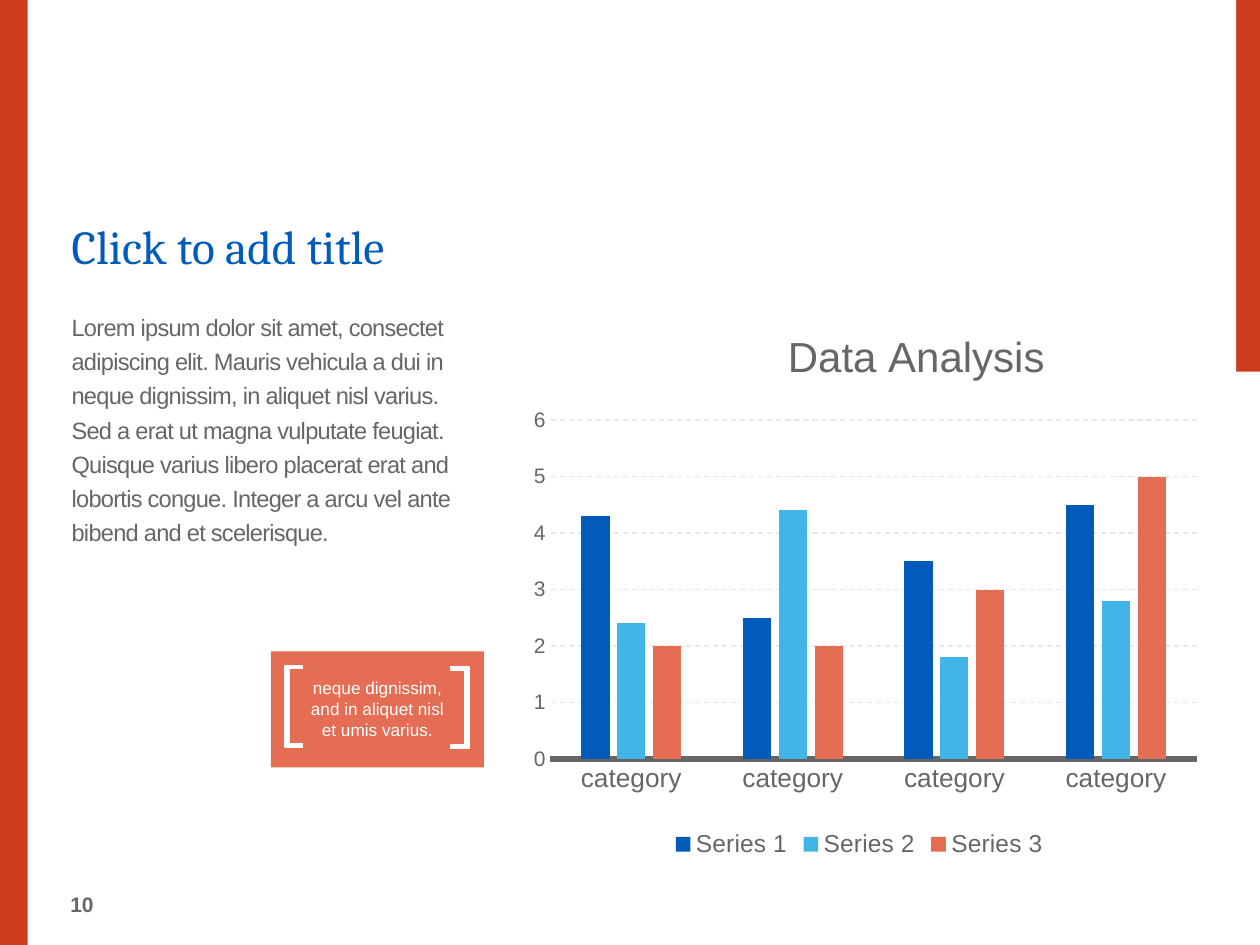
from lxml import etree
from pptx import Presentation
from pptx.chart.data import CategoryChartData
from pptx.dml.color import RGBColor
from pptx.enum.chart import XL_CHART_TYPE, XL_LEGEND_POSITION, XL_TICK_MARK
from pptx.enum.dml import MSO_LINE
from pptx.enum.shapes import MSO_SHAPE
from pptx.enum.text import MSO_ANCHOR, PP_ALIGN
from pptx.oxml import parse_xml
from pptx.oxml.ns import nsdecls, qn
from pptx.util import Pt

RED = RGBColor(0xCC, 0x3D, 0x1F)
WHITE = RGBColor(0xFF, 0xFF, 0xFF)
GREY = RGBColor(0x66, 0x66, 0x66)
GRID = RGBColor(0xE8, 0xE8, 0xE8)
BLUE = RGBColor(0x00, 0x5B, 0xBB)
SKY = RGBColor(0x41, 0xB6, 0xE6)
CORAL = RGBColor(0xE5, 0x6D, 0x54)

BODY = (
    "Lorem ipsum dolor sit amet, consectet adipiscing elit. Mauris vehicula a dui in "
    "neque dignissim, in aliquet nisl varius. Sed a erat ut magna vulputate feugiat. "
    "Quisque varius libero placerat erat and lobortis congue. Integer a arcu vel ante "
    "bibend and et scelerisque."
)
CATEGORIES = ["category"] * 4
SERIES = [
    ("Series 1", (4.3, 2.5, 3.5, 4.5), BLUE),
    ("Series 2", (2.4, 4.4, 1.8, 2.8), SKY),
    ("Series 3", (2, 2, 3, 5), CORAL),
]


def set_font(font, size, color, name="Arial", bold=False):
    for key, value in {"size": Pt(size), "name": name, "bold": bold}.items():
        setattr(font, key, value)
    font.color.rgb = color


def add_rectangle(page, box, color):
    shape = page.shapes.add_shape(MSO_SHAPE.RECTANGLE, *map(Pt, box))
    shape.shadow.inherit = False
    shape.fill.solid()
    shape.fill.fore_color.rgb = color
    shape.line.fill.background()


def add_text(page, box, text, size, color, name="Arial", bold=False,
             anchor=MSO_ANCHOR.TOP, spacing=None, tracking=None, align=PP_ALIGN.LEFT):
    frame = page.shapes.add_textbox(*map(Pt, box)).text_frame
    frame.word_wrap = True
    frame.vertical_anchor = anchor
    para = frame.paragraphs[0]
    para.text = text
    para.alignment = align
    para.line_spacing = spacing
    for span in para.runs:
        set_font(span.font, size, color, name, bold)
        if tracking:
            span.font._element.set("spc", str(tracking))


def add_bracket(page, box, opens_right):
    """Square bracket filling the box, its arms pointing right or left."""
    left, top, width, height = box
    stem, arm = 2.2, 1.8
    outline = [(width, 0), (0, 0), (0, height), (width, height),
               (width, height - arm), (stem, height - arm), (stem, arm), (width, arm)]
    points = [(Pt(left + (x if opens_right else width - x)), Pt(top + y))
              for x, y in outline]
    builder = page.shapes.build_freeform(*points[0])
    builder.add_line_segments(points[1:], close=True)
    shape = builder.convert_to_shape()
    shape.shadow.inherit = False
    shape.fill.solid()
    shape.fill.fore_color.rgb = WHITE
    shape.line.color.rgb = WHITE
    shape.line.width = Pt(1)


def add_frame(page, box):
    """White panels over the red ground, leaving a full left and a short right band."""
    left, top, width, height = box
    add_rectangle(page, (left + 15.84, top, 690.48, height), WHITE)
    add_rectangle(page, (left + 519.84, top + 212.4, width - 519.84, height - 212.4), WHITE)


def add_copy(page, box):
    """Title with the body text below it."""
    left, top, width, height = box
    add_text(page, (left, top, width, 56.16), "Click to add title", 27, BLUE,
             name="Cambria", anchor=MSO_ANCHOR.BOTTOM, spacing=0.8)
    add_text(page, (left, top + 68.4, 236.16, height - 68.4), BODY, 13.5, GREY,
             spacing=Pt(19.5), tracking=-40)


def add_callout(page, box):
    """Coral block with bracketed text."""
    left, top, width, height = box
    add_rectangle(page, box, CORAL)
    add_bracket(page, (left + 8, top + 8, 10, 46.5), True)
    add_bracket(page, (left + 103, top + 9, 10, 46.5), False)
    add_text(page, (left + 14.4, top + 11.5, 92.9, 42.5),
             "neque dignissim, and in aliquet nisl\vet umis varius.", 9.8, WHITE,
             align=PP_ALIGN.CENTER)


def manual_layout(x, y, w=None, h=None):
    layout = parse_xml(f"<c:layout {nsdecls('c')}><c:manualLayout/></c:layout>")
    parts = [("layoutTarget", "inner")] if w else []
    parts += [("xMode", "edge"), ("yMode", "edge"), ("x", x), ("y", y)]
    parts += [("w", w), ("h", h)] if w else []
    for tag, value in parts:
        etree.SubElement(layout[0], qn(f"c:{tag}")).set("val", str(value))
    return layout


def place(parent, layout, index):
    for old in parent.findall(qn("c:layout")):
        parent.remove(old)
    parent.insert(index, layout)


def add_column_chart(page, box):
    data = CategoryChartData()
    data.categories = CATEGORIES
    for name, values, _ in SERIES:
        data.add_series(name, values)
    chart = page.shapes.add_chart(
        XL_CHART_TYPE.COLUMN_CLUSTERED, *map(Pt, box), data).chart
    set_font(chart.font, 10, GREY)

    # Title and plot area
    title = chart.chart_title
    title.text_frame.text = "Data Analysis"
    set_font(title.text_frame.paragraphs[0].runs[0].font, 24, GREY)
    title.include_in_layout = False
    place(title._element, manual_layout(0.39, 0.01), 1)
    place(chart._chartSpace.chart.plotArea, manual_layout(0.07, 0.19, 0.9, 0.62), 0)

    # Columns
    plot = chart.plots[0]
    for key, value in {"gap_width": 219, "overlap": -27, "vary_by_categories": False}.items():
        setattr(plot, key, value)
    for series, (_, _, color) in zip(plot.series, SERIES):
        series.format.fill.solid()
        series.format.fill.fore_color.rgb = color

    # Axes
    for axis, size in ((chart.category_axis, 15), (chart.value_axis, 12)):
        axis.major_tick_mark = axis.minor_tick_mark = XL_TICK_MARK.NONE
        set_font(axis.tick_labels.font, size, GREY)
    base = chart.category_axis.format.line
    base.color.rgb = GREY
    base.width = Pt(3.25)
    scale = chart.value_axis
    for key, value in {"minimum_scale": 0, "maximum_scale": 6, "major_unit": 1}.items():
        setattr(scale, key, value)
    scale.format.line.fill.background()
    grid = scale.major_gridlines.format.line
    grid.color.rgb = GRID
    grid.width = Pt(0.75)
    grid.dash_style = MSO_LINE.DASH

    # Legend
    chart.has_legend = True
    chart.legend.position = XL_LEGEND_POSITION.BOTTOM
    chart.legend.include_in_layout = False
    set_font(chart.legend.font, 14, GREY)


def main():
    deck = Presentation()
    deck.slide_width, deck.slide_height = Pt(720), Pt(540)
    page = deck.slides.add_slide(deck.slide_layouts[6])
    page.background.fill.solid()
    page.background.fill.fore_color.rgb = RED

    add_frame(page, (0, 0, 720, 540))
    add_text(page, (33.12, 504.72, 47.52, 23.76), "10", 12, GREY, bold=True,
             anchor=MSO_ANCHOR.MIDDLE)
    add_column_chart(page, (285.84, 180.72, 410.4, 312.48))
    add_copy(page, (33.84, 103.68, 252, 286.56))
    add_callout(page, (154.8, 372.24, 121.68, 66.24))
    deck.save("out.pptx")


if __name__ == "__main__":
    main()
